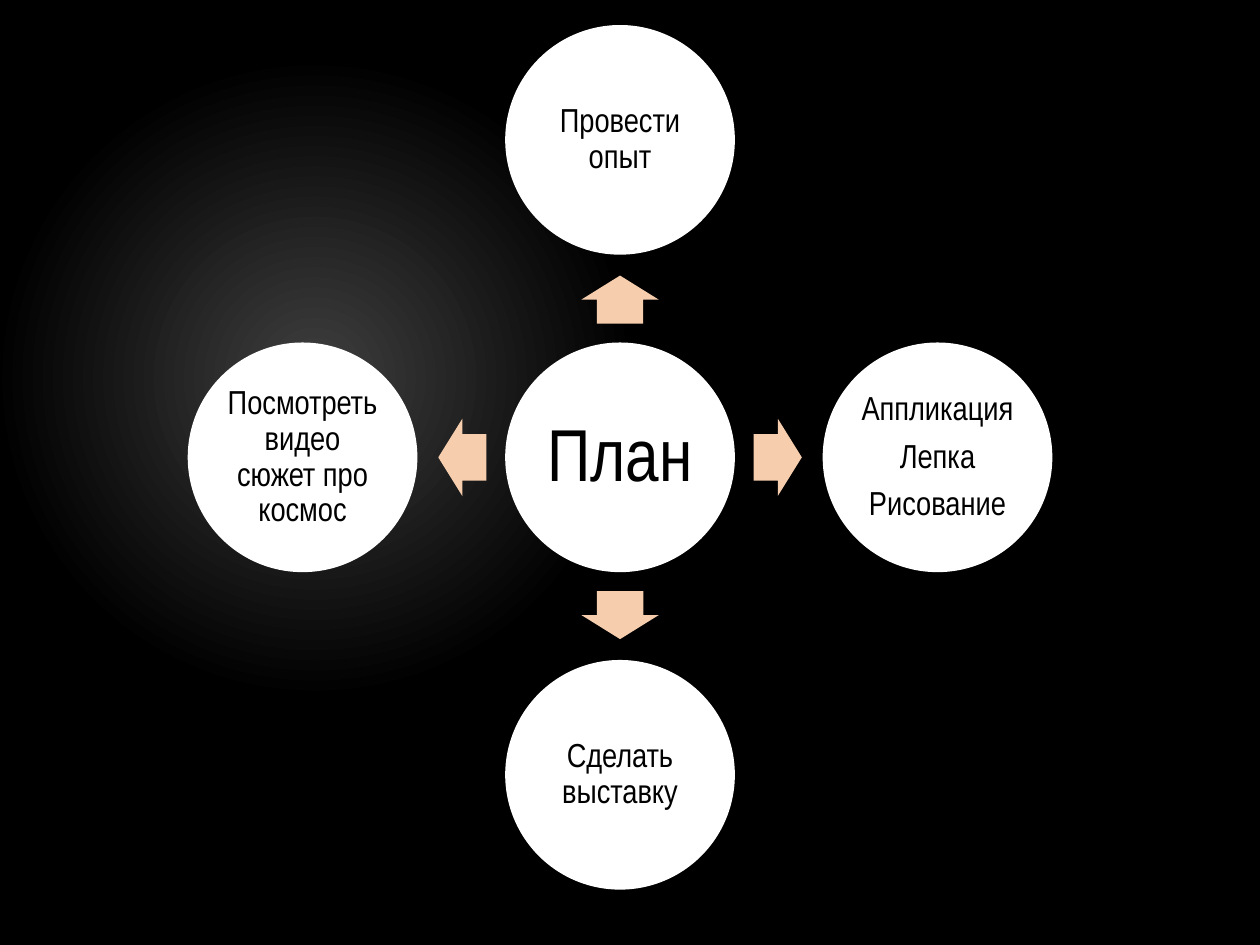
"""Build a slide with a plan circle and four arrows leading to activities."""
from pptx import Presentation
from pptx.dml.color import RGBColor
from pptx.enum.shapes import MSO_SHAPE as Preset
from pptx.enum.text import MSO_ANCHOR as Anchor, PP_ALIGN as Align
from pptx.oxml import parse_xml
from pptx.oxml.ns import nsdecls
from pptx.util import Cm, Pt

WHITE = RGBColor(0xFF, 0xFF, 0xFF)
BLACK = RGBColor(0x00, 0x00, 0x00)
GLOW = RGBColor(0x3F, 0x3F, 0x3F)
PEACH = RGBColor(0xF6, 0xCE, 0xAD)

FONT = "Arial Narrow"
PLAN = ["План"]
ACTIVITIES = [
    (["Провести опыт"], 0, -1, 270),
    (["Аппликация", "Лепка", "Рисование"], 1, 0, 0),
    (["Сделать выставку"], 0, 1, 90),
    (["Посмотреть видео сюжет про космос"], -1, 0, 180),
]
GRADIENT_STOPS = [(0, GLOW), (41, BLACK), (100, BLACK)]

CENTER_X, CENTER_Y = 12.5, 9.22
DIAMETER = 4.6
CIRCLE_DISTANCE = 6.4
ARROW_DISTANCE = 3.18
ARROW_LENGTH, ARROW_WIDTH = 0.97, 1.56


def set_background(slide):
    stops = "".join(
        f'<a:gs pos="{percent * 1000}"><a:srgbClr val="{color}"/></a:gs>'
        for percent, color in GRADIENT_STOPS
    )
    background = parse_xml(
        f'<p:bg {nsdecls("p", "a")}><p:bgPr><a:gradFill rotWithShape="1">'
        f'<a:gsLst>{stops}</a:gsLst><a:path path="circle">'
        '<a:fillToRect l="50000" t="80000" r="100000" b="100000"/></a:path>'
        '</a:gradFill><a:effectLst/></p:bgPr></p:bg>'
    )
    slide.element.cSld.insert(0, background)


def add_centered(slide, preset, x, y, width, height, color):
    shape = slide.shapes.add_shape(
        preset, Cm(x - width / 2), Cm(y - height / 2), Cm(width), Cm(height)
    )
    shape.shadow.inherit = False
    shape.fill.solid()
    shape.fill.fore_color.rgb = color
    return shape


def add_circle(slide, x, y, lines, size, inset):
    circle = add_centered(slide, Preset.OVAL, x, y, DIAMETER, DIAMETER, WHITE)
    circle.line.color.rgb = WHITE
    circle.line.width = Pt(0.85)
    frame = circle.text_frame
    frame.word_wrap = True
    frame.vertical_anchor = Anchor.MIDDLE
    frame.margin_left = frame.margin_right = Cm(inset)
    frame.margin_top = frame.margin_bottom = Cm(inset)
    frame.text = "\n".join(lines)
    for paragraph in frame.paragraphs:
        paragraph.alignment = Align.CENTER
        paragraph.line_spacing = 0.9
        paragraph.space_after = Pt(round(size * 0.35, 2))
        paragraph.font.name = FONT
        paragraph.font.size = Pt(size)
        paragraph.font.color.rgb = BLACK


def add_arrow(slide, x, y, rotation):
    arrow = add_centered(
        slide, Preset.RIGHT_ARROW, x, y, ARROW_LENGTH, ARROW_WIDTH, PEACH
    )
    arrow.line.fill.background()
    arrow.adjustments[0] = 0.6
    arrow.adjustments[1] = 0.5
    arrow.rotation = rotation


def main():
    presentation = Presentation()
    presentation.slide_width = Cm(25.4)
    presentation.slide_height = Cm(19.05)
    slide = presentation.slides.add_slide(presentation.slide_layouts[6])
    set_background(slide)
    add_circle(slide, CENTER_X, CENTER_Y, PLAN, 42, 0.15)
    for lines, dx, dy, rotation in ACTIVITIES:
        add_arrow(
            slide, CENTER_X + dx * ARROW_DISTANCE,
            CENTER_Y + dy * ARROW_DISTANCE, rotation,
        )
        add_circle(
            slide, CENTER_X + dx * CIRCLE_DISTANCE,
            CENTER_Y + dy * CIRCLE_DISTANCE, lines, 19, 0.07,
        )
    presentation.save("out.pptx")


if __name__ == "__main__":
    main()
